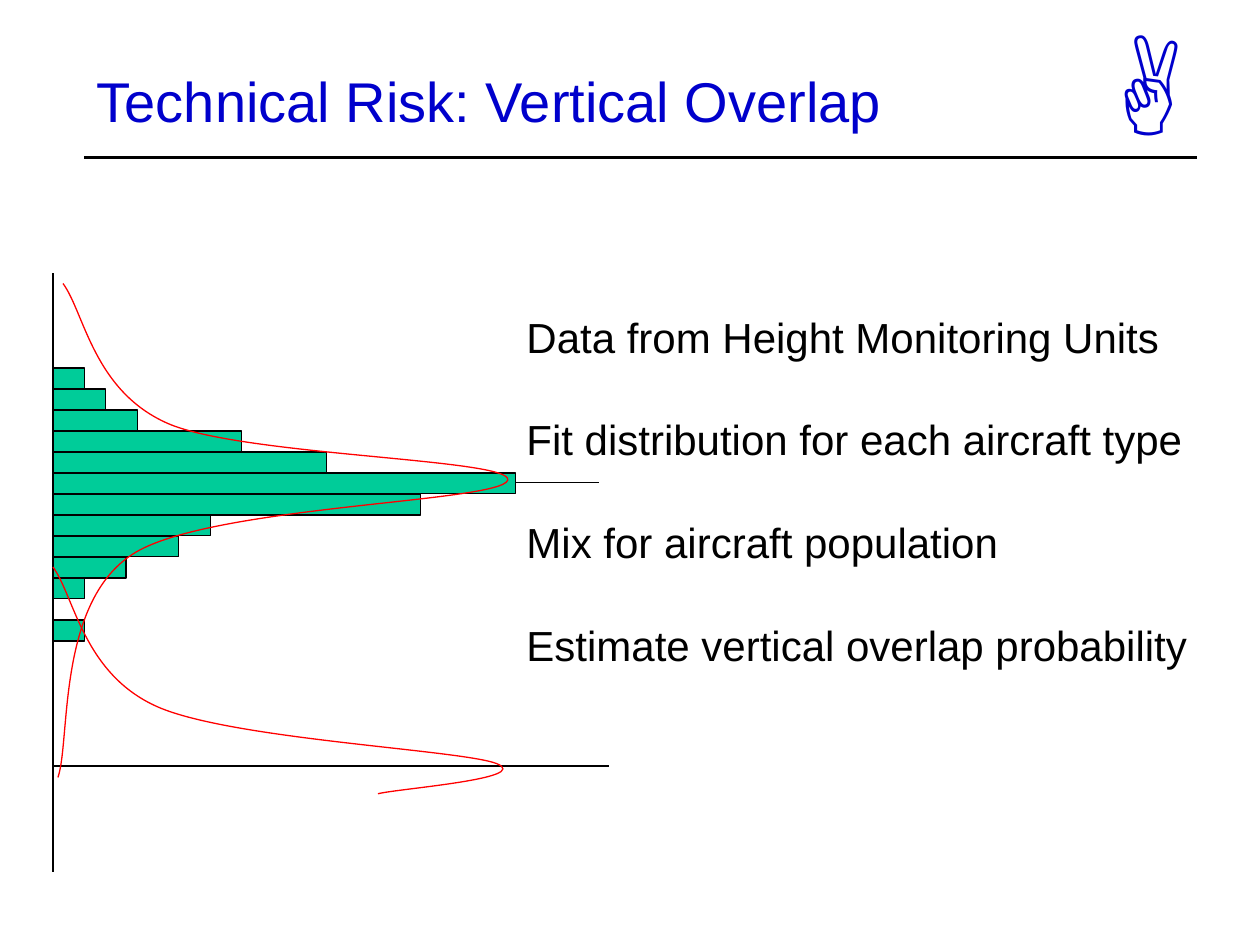
from lxml import etree
from pptx import Presentation
from pptx.dml.color import RGBColor
from pptx.enum import shapes, text
from pptx.oxml.ns import qn
from pptx.util import Inches, Pt

BLACK = RGBColor(0x00, 0x00, 0x00)
BLUE = RGBColor(0x00, 0x00, 0xCC)
GREEN = RGBColor(0x00, 0xCC, 0x99)
RED = RGBColor(0xFF, 0x00, 0x00)

deck = Presentation()
deck.slide_width, deck.slide_height = Inches(10), Inches(7.5)
page = deck.slides.add_slide(deck.slide_layouts[6])


def add_text(lines, left, top, width, height, size, font="Arial", color=BLACK,
             wrap=True, anchor=text.MSO_ANCHOR.TOP, gap=0):
    """Add a text box with one paragraph per line, gap points apart."""
    box = page.shapes.add_textbox(Inches(left), Inches(top), Inches(width), Inches(height))
    frame = box.text_frame
    frame.word_wrap = wrap
    frame.vertical_anchor = anchor
    for index, line in enumerate(lines):
        para = frame.paragraphs[0] if index == 0 else frame.add_paragraph()
        para.space_before = Pt(gap if index else 0)
        span = para.add_run()
        span.text = line
        span.font.name = font
        span.font.size = Pt(size)
        span.font.color.rgb = color


def add_line(x1, y1, x2, y2, weight=0.75):
    line = page.shapes.add_connector(shapes.MSO_CONNECTOR.STRAIGHT,
                                     Inches(x1), Inches(y1), Inches(x2), Inches(y2))
    line.line.color.rgb = BLACK
    line.line.width = Pt(weight)
    etree.SubElement(line._element.spPr, qn("a:effectLst"))


# Axes
AXIS = 0.42
add_line(AXIS, 3.83, 4.75, 3.83)
add_line(AXIS, 6.08, 4.83, 6.08)
add_line(AXIS, 2.17, AXIS, 6.92)

# Sideways histogram, one bar per height band; 0 is an empty band
BAND = 1 / 6
bar_lengths = [0.25, 0.42, 0.67, 1.5, 2.17, 3.67, 2.92, 1.25, 1, 0.58, 0.25, 0, 0.25]
for band, length in enumerate(bar_lengths):
    if length:
        bar = page.shapes.add_shape(shapes.MSO_SHAPE.RECTANGLE, Inches(AXIS),
                                    Inches(2.92 + band * BAND), Inches(length), Inches(BAND))
        bar.shadow.inherit = False
        bar.fill.solid()
        bar.fill.fore_color.rgb = GREEN
        bar.line.color.rgb = BLACK
        bar.line.width = Pt(0.75)

# Fitted density curves: a start point, then three points per Bézier segment
curves = [
    [(0.46, 6.17), (0.56, 5.88), (0.45, 4.79), (1.05, 4.4),
     (1.64, 4.01), (3.98, 3.99), (4.03, 3.81),
     (4.07, 3.64), (1.92, 3.62), (1.33, 3.36),
     (0.74, 3.1), (0.67, 2.48), (0.5, 2.25)],
    [(3, 6.3), (3.15, 6.26), (4.24, 6.18), (3.94, 6.06),
     (3.65, 5.95), (1.84, 5.87), (1.25, 5.61),
     (0.66, 5.35), (0.59, 4.73), (0.42, 4.5)],
]
for points in curves:
    start, *rest = [(Inches(x), Inches(y)) for x, y in points]
    builder = page.shapes.build_freeform(*start)
    builder.add_line_segments(rest, close=False)
    curve = builder.convert_to_shape()
    curve.shadow.inherit = False
    curve.fill.background()
    curve.line.color.rgb = RED
    curve.line.width = Pt(0.75)
    # Regroup the straight segments, three by three, into cubic ones
    outline = curve._element.find(".//" + qn("a:path"))
    segments = outline.findall(qn("a:lnTo"))
    for first in range(0, len(segments), 3):
        cubic = etree.SubElement(outline, qn("a:cubicBezTo"))
        for segment in segments[first:first + 3]:
            cubic.append(segment[0])
            outline.remove(segment)

# Steps, title and symbol
steps = [
    "Data from Height Monitoring Units",
    "Fit distribution for each aircraft type",
    "Mix for aircraft population",
    "Estimate vertical overlap probability",
]
add_text(steps, 4.08, 2.42, 5.45, 2.9, 24, wrap=False, gap=30)
add_text(["Technical Risk: Vertical Overlap"], 0.67, 0.17, 8.5, 1.25, 32,
         color=BLUE, anchor=text.MSO_ANCHOR.MIDDLE)
add_line(0.67, 1.25, 9.5, 1.25, weight=2)
add_text(["✌"], 8.75, 0, 1.17, 1.3, 72, font="Times New Roman", color=BLUE)

deck.save("out.pptx")
